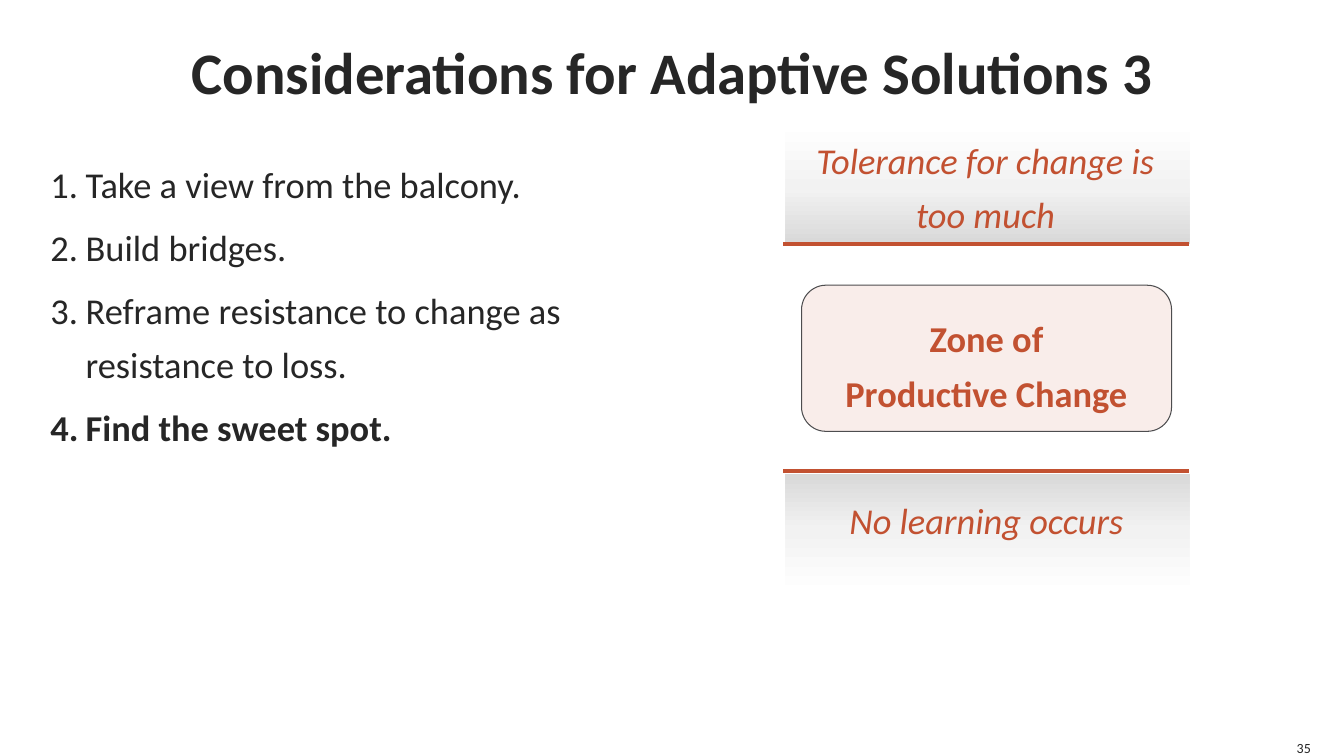
import copy

import pptx
import pptx.dml.color
import pptx.enum.shapes
import pptx.enum.text
import pptx.oxml.ns
import pptx.util
from lxml import etree

RGBColor = pptx.dml.color.RGBColor
INK = RGBColor(0x26, 0x26, 0x26)
RUST = RGBColor(0xC2, 0x51, 0x31)
BLUSH = RGBColor(0xF9, 0xED, 0xEA)
OUTLINE = RGBColor(0x4D, 0x4D, 0x4F)
FADE = [(0, RGBColor(0xFF, 0xFF, 0xFF)),
        (0.54, RGBColor(0xF2, 0xF2, 0xF2)),
        (0.99, RGBColor(0xD9, 0xD9, 0xD9))]
qn = pptx.oxml.ns.qn
SHAPES = pptx.enum.shapes.MSO_SHAPE
ALIGN = pptx.enum.text.PP_ALIGN
ANCHOR = pptx.enum.text.MSO_ANCHOR

deck = pptx.Presentation()
deck.slide_width = pptx.util.Inches(13.33)
deck.slide_height = pptx.util.Inches(7.5)
page = deck.slides.add_slide(deck.slide_layouts[6])


def area(left, top, width, height):
    """Turn percentages of the slide's size into lengths."""
    across, down = deck.slide_width / 100, deck.slide_height / 100
    return (round(left * across), round(top * down),
            round(width * across), round(height * down))


def add_text(place, lines, size, color, align, anchor=ANCHOR.TOP,
             spacing=1.0, inset=True, numbered=False):
    """Add a text box; lines holds (wording, bold, italic) tuples."""
    box = page.shapes.add_textbox(*area(*place))
    frame = box.text_frame
    frame.word_wrap = True
    frame.vertical_anchor = anchor
    if not inset:
        frame.margin_left = frame.margin_right = 0
        frame.margin_top = frame.margin_bottom = 0
    for index, (wording, bold, italic) in enumerate(lines):
        para = frame.add_paragraph() if index else frame.paragraphs[0]
        para.text = wording
        para.alignment = align
        para.line_spacing = spacing
        para.space_before = pptx.util.Pt(6 if index else 0)
        if numbered:
            layout = para._p.get_or_add_pPr()
            indent = pptx.util.Inches(0.35)
            layout.set("marL", str(indent))
            layout.set("indent", str(-indent))
            etree.SubElement(layout, qn("a:buAutoNum"), type="arabicPeriod")
        para.font.name = "Calibri"
        para.font.size = pptx.util.Pt(size)
        para.font.color.rgb = color
        para.font.bold = bold
        para.font.italic = italic
    return box


# Title and numbered list
add_text((3.75, 0, 92.5, 18.67),
         [("Considerations for Adaptive Solutions 3", True, False)],
         42, INK, ALIGN.CENTER, ANCHOR.MIDDLE, inset=False)
add_text((3.75, 20, 44.71, 63.33),
         [("Take a view from the balcony.", False, False),
          ("Build bridges.", False, False),
          ("Reframe resistance to change as resistance to loss.", False, False),
          ("Find the sweet spot.", True, False)],
         26, INK, ALIGN.LEFT, spacing=1.25, inset=False, numbered=True)

# Fading bands, each with a limit line on its dark edge
for band_top, limit, turn in [(62.67, 62.27, 180), (16.27, 32.27, 0)]:
    band = page.shapes.add_shape(SHAPES.RECTANGLE,
                                 *area(58.44, band_top, 30.08, 16))
    band.shadow.inherit = False
    band.rotation = turn
    band.line.fill.background()
    band.fill.gradient()
    band.fill.gradient_angle = 270
    stop_list = band._element.spPr.find(".//" + qn("a:gsLst"))
    stop_list.append(copy.deepcopy(stop_list[-1]))
    for stop, (position, shade) in zip(band.fill.gradient_stops, FADE):
        stop.position = position
        stop.color.rgb = shade

    left, y, width, _ = area(58.29, limit, 30.16, 0)
    edge = page.shapes.add_connector(pptx.enum.shapes.MSO_CONNECTOR.STRAIGHT,
                                     left, y, left + width, y)
    edge.line.color.rgb = RUST
    edge.line.width = pptx.util.Pt(3)
    etree.SubElement(edge._element.spPr, qn("a:effectLst"))

# Zone between the limits
zone = page.shapes.add_shape(SHAPES.ROUNDED_RECTANGLE,
                             *area(59.64, 37.73, 27.53, 19.33))
zone.shadow.inherit = False
zone.fill.solid()
zone.fill.fore_color.rgb = BLUSH
zone.line.color.rgb = OUTLINE
zone.line.width = pptx.util.Pt(0.75)

# Labels of the diagram
for place, label in [
        ((59.64, 63.73, 27.53, 8.13), ("No learning occurs", False, True)),
        ((59.64, 39.73, 27.53, 15.33), ("Zone of\vProductive Change", True, False)),
        ((58.29, 16.13, 30.08, 15.33),
         ("Tolerance for change is too much", False, True))]:
    add_text(place, [label], 26, RUST, ALIGN.CENTER, spacing=1.25)

# Page number
number = add_text((96.25, 97.73, 1.28, 2.27), [("35", False, False)],
                  10, INK, ALIGN.RIGHT, ANCHOR.BOTTOM, inset=False)
number.text_frame.word_wrap = False

deck.save("out.pptx")
